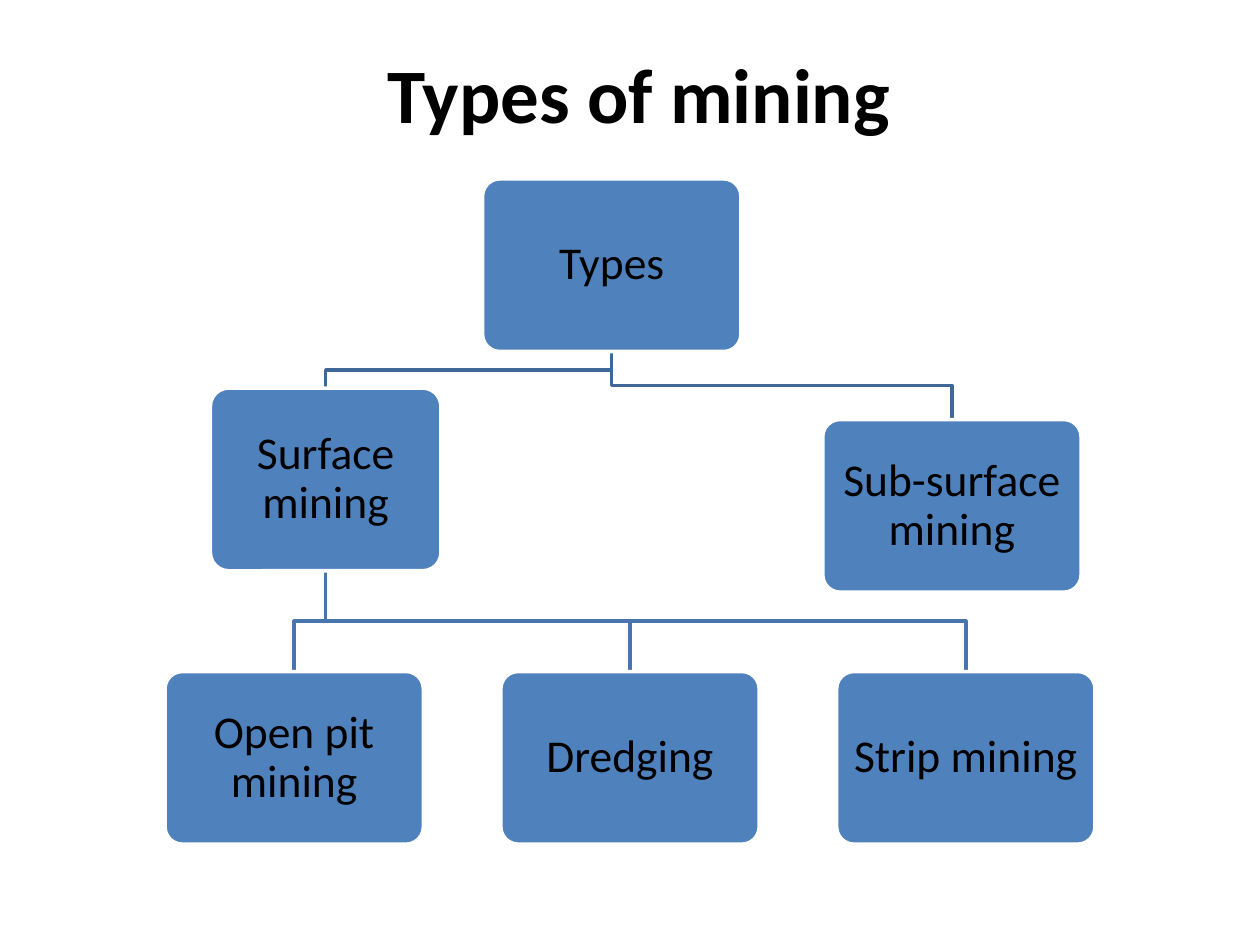
import pptx
import pptx.util
import pptx.dml.color
import pptx.enum.shapes
import pptx.enum.text
from dataclasses import dataclass

Inches = pptx.util.Inches
Pt = pptx.util.Pt
rgb = pptx.dml.color.RGBColor.from_string


@dataclass(frozen=True)
class Theme:
    font: str = "Calibri"
    ink: str = "000000"
    node: str = "4F81BD"
    edge: str = "FFFFFF"
    links: tuple = ("3F6797", "4875AC")  # one colour for each level
    title: int = 44
    label: int = 26
    line: int = 2


THEME = Theme()


def set_text(shape, text, size, bold=False):
    frame = shape.text_frame
    frame.text = text
    frame.word_wrap = True
    frame.vertical_anchor = pptx.enum.text.MSO_ANCHOR.MIDDLE
    para = frame.paragraphs[0]
    para.alignment = pptx.enum.text.PP_ALIGN.CENTER
    font = para.runs[0].font
    font.name, font.size, font.bold = THEME.font, Pt(size), bold
    font.color.rgb = rgb(THEME.ink)
    return frame


def add_title(slide, box, text):
    shape = slide.shapes.add_textbox(*map(Inches, box))
    frame = set_text(shape, text, THEME.title, bold=True)
    frame.margin_left = Inches(0.24)


def add_node(slide, box, text):
    shape = slide.shapes.add_shape(
        pptx.enum.shapes.MSO_SHAPE.ROUNDED_RECTANGLE, *map(Inches, box))
    shape.adjustments[0] = 0.1
    shape.shadow.inherit = False
    shape.fill.solid()
    shape.fill.fore_color.rgb = rgb(THEME.node)
    shape.line.color.rgb = rgb(THEME.edge)
    shape.line.width = Pt(THEME.line)
    frame = set_text(shape, text, THEME.label)
    frame.paragraphs[0].line_spacing = 0.9
    frame.margin_left = frame.margin_right = Inches(0.07)


def add_link(slide, upper, lower, color):
    """Draw an elbow from the foot of one box to the top of another."""
    x1, y1 = upper[0] + upper[2] / 2, upper[1] + upper[3]
    x2, y2 = lower[0] + lower[2] / 2, lower[1]
    mid = (y1 + y2) / 2
    path = slide.shapes.build_freeform(Inches(x1), Inches(y1))
    bends = [(x1, mid), (x2, mid), (x2, y2)]
    path.add_line_segments([(Inches(x), Inches(y)) for x, y in bends], close=False)
    shape = path.convert_to_shape()
    shape.shadow.inherit = False
    shape.fill.background()
    shape.line.color.rgb = rgb(color)
    shape.line.width = Pt(THEME.line)


def add_tree(slide, box):
    left, top, width, height = box
    wide, high = 2.05, 1.37
    step = (width - wide) / 2
    root, surface, deep = "Types", "Surface mining", "Sub-surface mining"
    leaves = ["Open pit mining", "Dredging", "Strip mining"]
    nodes = {
        root: (left + 2.52, top, wide, high),
        surface: (left + 0.36, top + 1.66, 1.83, 1.45),
        deep: (left + 5.22, top + 1.91, wide, high),
    }
    for i, leaf in enumerate(leaves):
        nodes[leaf] = (left + i * step, top + height - high, wide, high)

    levels = [(root, [surface, deep]), (surface, leaves)]
    for (parent, kids), color in zip(levels, THEME.links):
        for kid in kids:
            add_link(slide, nodes[parent], nodes[kid], color)
    for text, place in nodes.items():
        add_node(slide, place, text)


def main():
    deck = pptx.Presentation()
    deck.slide_width, deck.slide_height = Inches(10), Inches(7.5)
    slide = deck.slides.add_slide(deck.slide_layouts[6])
    add_title(slide, (0.5, 0.3, 9, 0.87), "Types of mining")
    add_tree(slide, (1.31, 1.42, 7.38, 5.28))
    deck.save("out.pptx")


if __name__ == "__main__":
    main()
